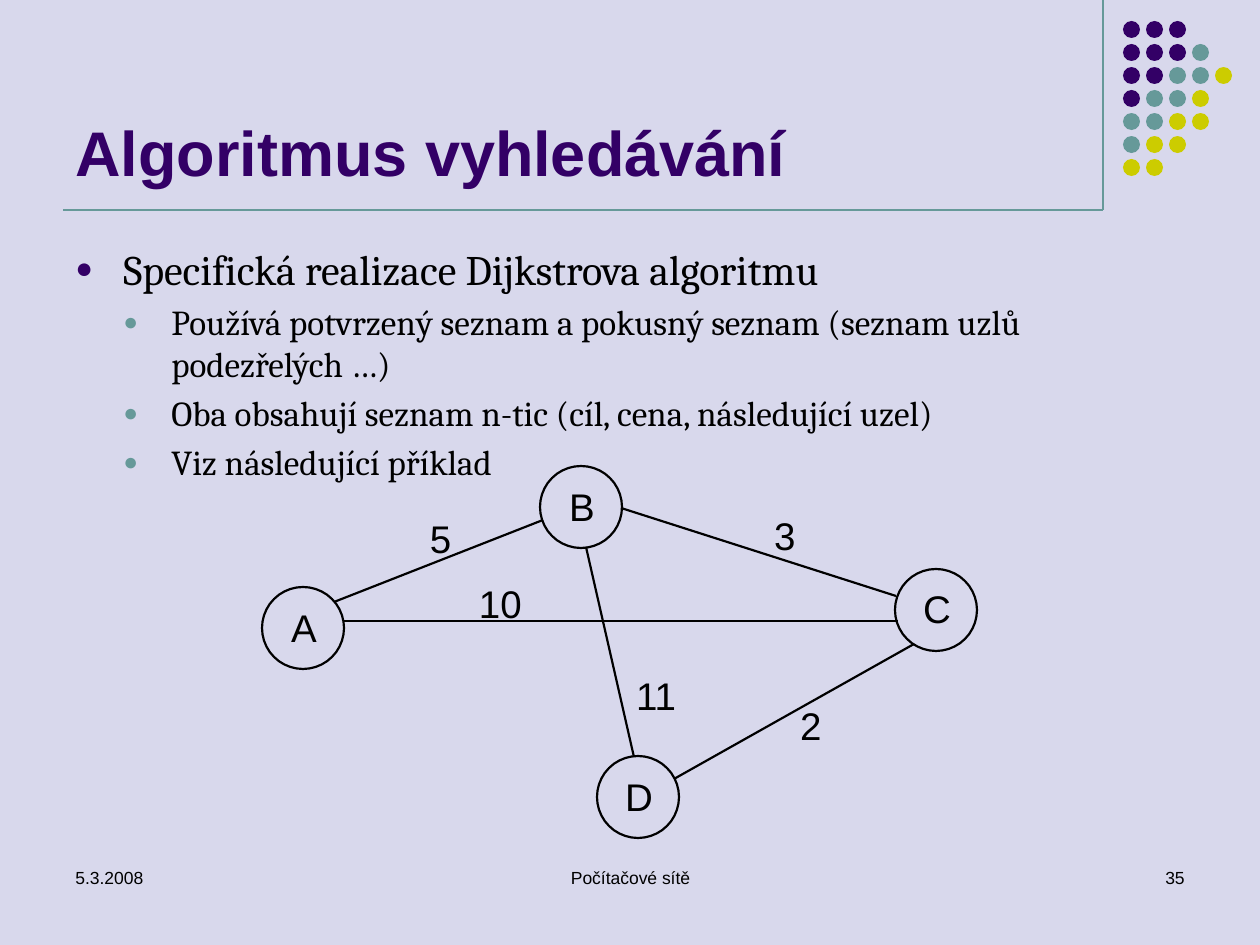
import math
from lxml import etree
from pptx import Presentation, util as u
from pptx.dml.color import RGBColor
from pptx.enum import shapes as sh, text as tx
from pptx.oxml.ns import qn

COLORS = {"back": "D8D8EC", "violet": "330066", "teal": "669999",
          "lime": "CCCC00", "black": "000000"}
LEFT, MID, RIGHT = tx.PP_ALIGN.LEFT, tx.PP_ALIGN.CENTER, tx.PP_ALIGN.RIGHT

TITLE = "Algoritmus vyhledávání"
BODY = [
    (0, "Specifická realizace Dijkstrova algoritmu"),
    (1, "Používá potvrzený seznam a pokusný seznam (seznam uzlů podezřelých …)"),
    (1, "Oba obsahují seznam n-tic (cíl, cena, následující uzel)"),
    (1, "Viz následující příklad"),
]
LEVELS = [(24, "violet"), (20, "teal")]  # text size, bullet colour
FOOTER = [("5.3.2008", 63, 294, LEFT), ("Počítačové sítě", 431, 399, MID),
          ("35", 903, 294, RIGHT)]
DOTS = ["VVV", "VVVT", "VVTTL", "VTTL", "TTLL", "TLL", "LL"]
DOT_FILL = {"V": "violet", "T": "teal", "L": "lime"}
RULES = [(1103, 0, 1103, 210), (63, 210, 1103, 210)]
NODES = {"A": (303, 628), "B": (581, 507), "C": (936, 610), "D": (638, 797)}
EDGES = [  # cost, label corner, line ends
    ("5", (430, 515), (334, 602, 543, 520)),
    ("3", (774, 512), (621, 508, 896, 596)),
    ("10", (479, 580), (343, 621, 898, 621)),
    ("11", (636, 672), (586, 547, 634, 757)),
    ("2", (800, 702), (914, 644, 674, 779)),
]
RADIUS, SIDES = 41, 40
DIGIT, LETTER, HIGH = 22, 30, 47
DOT, PITCH = 17, 23
INDENT = 48


def px(n):
    return u.Emu(round(n * 914400 / 126))


def rgb(name):
    return RGBColor.from_string(COLORS[name])


def style(par, size, color="black", font="Arial", bold=False):
    for run in par.runs:
        run.font.size, run.font.name, run.font.bold = u.Pt(size), font, bold
        run.font.color.rgb = rgb(color)


def box(slide, x, y, w, h):
    frame = slide.shapes.add_textbox(px(x), px(y), px(w), px(h)).text_frame
    frame.word_wrap = True
    return frame


def label(slide, text, x, y, w, align=LEFT):
    """Add a graph label without margins."""
    frame = box(slide, x, y, w, HIGH)
    frame.word_wrap = False
    frame.auto_size = tx.MSO_AUTO_SIZE.SHAPE_TO_FIT_TEXT
    frame.margin_left = frame.margin_right = 0
    frame.margin_top = frame.margin_bottom = 0
    frame.text = text
    frame.paragraphs[0].alignment = align
    style(frame.paragraphs[0], 22)


def line(slide, ends, color, width):
    item = slide.shapes.add_connector(sh.MSO_CONNECTOR.STRAIGHT, *map(px, ends))
    item.line.color.rgb, item.line.width = rgb(color), u.Pt(width)
    etree.SubElement(item.element.spPr, qn("a:effectLst"))


def bullet(par, level, color):
    props = par._p.get_or_add_pPr()
    props.set("marL", str(px(INDENT * (level + 1))))
    props.set("indent", str(-px(INDENT)))
    tint = etree.SubElement(props, qn("a:buClr"))
    etree.SubElement(tint, qn("a:srgbClr"), val=COLORS[color])
    etree.SubElement(props, qn("a:buSzPct"), val="70000")
    etree.SubElement(props, qn("a:buFont"), typeface="Arial")
    etree.SubElement(props, qn("a:buChar"), char="●")


def frame_slide(slide):
    """Add the rules, the dot pattern and the footer."""
    for ends in RULES:
        line(slide, ends, "teal", 0.75)
    for row, keys in enumerate(DOTS):
        for col, key in enumerate(keys):
            dot = slide.shapes.add_shape(
                sh.MSO_SHAPE.OVAL, px(1123 + col * PITCH), px(21 + row * PITCH),
                px(DOT), px(DOT))
            dot.shadow.inherit = False
            dot.fill.solid()
            dot.fill.fore_color.rgb = rgb(DOT_FILL[key])
            dot.line.fill.background()
    for text, x, w, align in FOOTER:
        frame = box(slide, x, 861, w, 63)
        frame.text = text
        frame.paragraphs[0].alignment = align
        style(frame.paragraphs[0], 10)


def add_text(slide):
    head = box(slide, 63, 16, 1040, 179)
    head.vertical_anchor = tx.MSO_ANCHOR.BOTTOM
    head.text = TITLE
    style(head.paragraphs[0], 36, "violet", bold=True)
    body = box(slide, 63, 237, 1134, 607)
    body.text = "\n".join(text for _, text in BODY)
    for par, (level, _) in zip(body.paragraphs, BODY):
        size, color = LEVELS[level]
        par.level = level
        par.space_before = u.Pt(size * 0.2)
        bullet(par, level, color)
        style(par, size, font="Cambria")


def add_graph(slide):
    for name, (x, y) in NODES.items():
        turns = [2 * math.pi * i / SIDES for i in range(SIDES)]
        ring = [(px(x + RADIUS * math.sin(t)), px(y + RADIUS * math.cos(t)))
                for t in turns]
        path = slide.shapes.build_freeform(*ring[0])
        path.add_line_segments(ring[1:], close=True)
        node = path.convert_to_shape()
        node.shadow.inherit = False
        node.fill.background()
        node.line.color.rgb, node.line.width = rgb("black"), u.Pt(1.25)
        label(slide, name, x + 1 - LETTER / 2, y - 1 - HIGH / 2, LETTER, MID)
    for cost, (x, y), ends in EDGES:
        line(slide, ends, "black", 1.25)
        label(slide, cost, x, y, DIGIT * len(cost))


def main():
    deck = Presentation()
    deck.slide_width, deck.slide_height = px(1260), px(945)
    slide = deck.slides.add_slide(deck.slide_layouts[6])
    slide.background.fill.solid()
    slide.background.fill.fore_color.rgb = rgb("back")
    frame_slide(slide)
    add_text(slide)
    add_graph(slide)
    deck.save("out.pptx")


if __name__ == "__main__":
    main()
